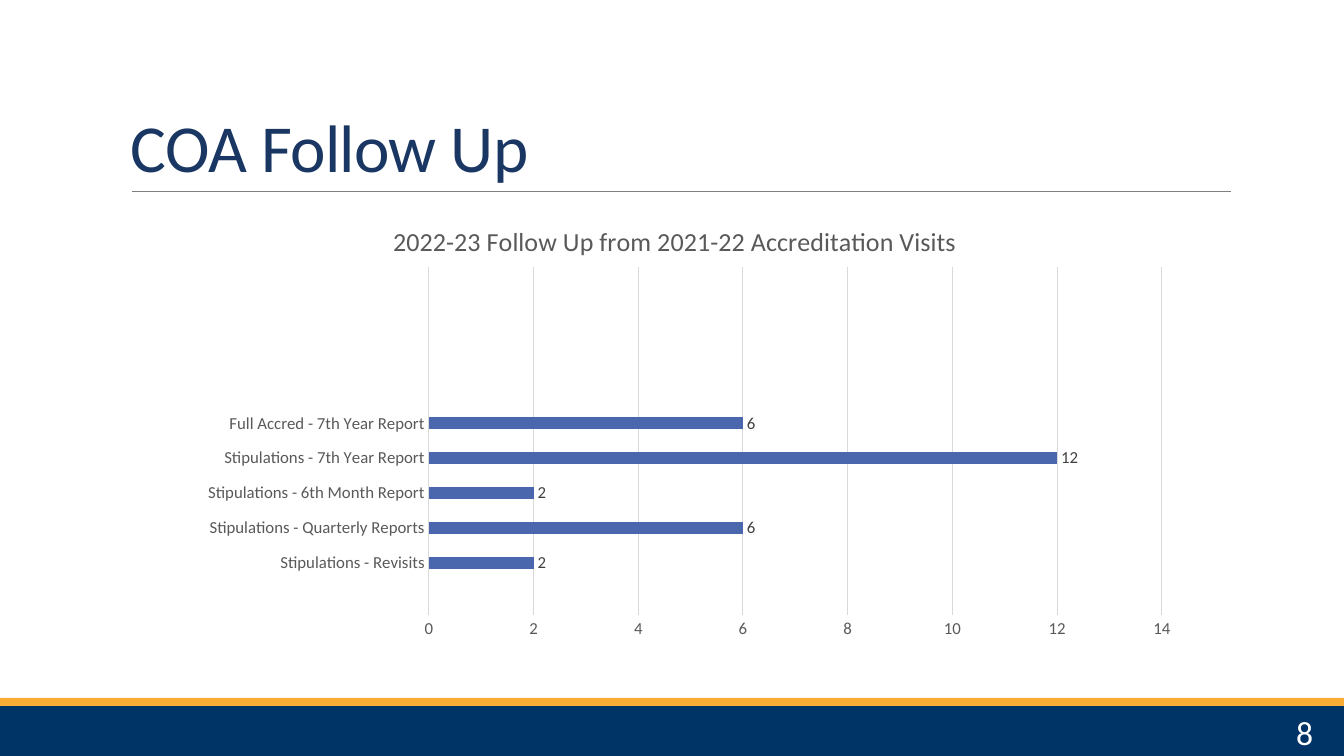
from lxml import etree
from pptx import Presentation
from pptx import util as u
from pptx.chart.data import CategoryChartData
from pptx.dml.color import RGBColor
from pptx.enum import chart as ch, shapes, text
from pptx.oxml.ns import qn

SIZE = (1344, 756)
SCALE = 12192000 / SIZE[0]
FONT = "Calibri"

BANDS = [((0, 706, 1344, 50), "003366"), ((0, 698, 1344, 8), "FAAC35")]
RULE = (132, 191, 1231, 191)
TEXTS = [
    ("COA Follow Up", (121, 31, 1109, 160),
     {"size": 48, "color": "1A3763"},
     {"line_spacing": 0.85}, text.MSO_ANCHOR.BOTTOM, -50),
    ("8", (1179, 712, 144, 40),
     {"size": 24, "color": "FFFFFF"},
     {"alignment": text.PP_ALIGN.RIGHT}, text.MSO_ANCHOR.MIDDLE, 0),
]
CHART_BOX = (158, 204, 1034, 444)
CHART_TITLE = "2022-23 Follow Up from 2021-22 Accreditation Visits"
SLOTS = 10
FOLLOW_UPS = [
    ("", None),
    ("Stipulations - Revisits", 2),
    ("Stipulations - Quarterly Reports", 6),
    ("Stipulations - 6th Month Report", 2),
    ("Stipulations - 7th Year Report", 12),
    ("Full Accred - 7th Year Report", 6),
]
PLOT = {"x": 0.262, "y": 0.141, "w": 0.709, "h": 0.785}


def px(lengths):
    return [u.Emu(round(n * SCALE)) for n in lengths]


def rgb(code):
    return RGBColor.from_string(code)


def paint(fill, code):
    fill.solid()
    fill.fore_color.rgb = rgb(code)


def stroke(line, code, width):
    paint(line.fill, code)
    line.width = u.Pt(width)


def style(font, size, color):
    values = {"name": FONT, "size": u.Pt(size), "bold": False}
    for name, value in values.items():
        setattr(font, name, value)
    font.color.rgb = rgb(color)


def add_text(page, words, place, font, layout, anchor, tracking):
    box = page.shapes.add_textbox(*px(place))
    frame = box.text_frame
    frame.word_wrap = True
    frame.vertical_anchor = anchor
    para = frame.paragraphs[0]
    for name, value in layout.items():
        setattr(para, name, value)
    span = para.add_run()
    span.text = words
    style(span.font, **font)
    if tracking:
        span.font._element.set("spc", str(tracking))


def place_plot(chart):
    area = chart._chartSpace.chart.plotArea
    for old in area.findall(qn("c:layout")):
        area.remove(old)
    layout = etree.Element(qn("c:layout"))
    manual = etree.SubElement(layout, qn("c:manualLayout"))
    settings = {"layoutTarget": "inner", "xMode": "edge", "yMode": "edge", **PLOT}
    for name, value in settings.items():
        etree.SubElement(manual, qn("c:" + name)).set("val", str(value))
    area.insert(0, layout)


def add_follow_up_chart(page):
    rows = FOLLOW_UPS + [("", None)] * (SLOTS - len(FOLLOW_UPS))
    data = CategoryChartData()
    data.categories = [label for label, _ in rows]
    data.add_series("Series 1", [count for _, count in rows])
    chart = page.shapes.add_chart(
        ch.XL_CHART_TYPE.BAR_CLUSTERED, *px(CHART_BOX), data).chart
    style(chart.font, 10, "000000")
    chart.has_legend = False
    chart.has_title = True
    title = chart.chart_title
    title.include_in_layout = False
    title.text_frame.text = CHART_TITLE
    style(title.text_frame.paragraphs[0].runs[0].font, 18.6, "595959")

    for axis in (chart.category_axis, chart.value_axis):
        axis.major_tick_mark = axis.minor_tick_mark = ch.XL_TICK_MARK.NONE
        style(axis.tick_labels.font, 12, "595959")
    stroke(chart.category_axis.format.line, "D9D9D9", 0.75)
    values = chart.value_axis
    values.format.line.fill.background()
    values.minimum_scale, values.maximum_scale, values.major_unit = 0, 14, 2
    values.has_major_gridlines = True
    stroke(values.major_gridlines.format.line, "D9D9D9", 0.75)

    plot = chart.plots[0]
    plot.gap_width = 182
    plot.vary_by_categories = False
    paint(plot.series[0].format.fill, "4A66AC")
    labels = plot.series[0].data_labels
    labels.show_value = True
    labels.position = ch.XL_LABEL_POSITION.OUTSIDE_END
    style(labels.font, 12, "404040")
    place_plot(chart)


def main():
    """Build the accreditation follow-up slide."""
    deck = Presentation()
    deck.slide_width, deck.slide_height = px(SIZE)
    page = deck.slides.add_slide(deck.slide_layouts[6])
    for place, color in BANDS:
        band = page.shapes.add_shape(shapes.MSO_SHAPE.RECTANGLE, *px(place))
        band.shadow.inherit = False
        paint(band.fill, color)
        band.line.fill.background()
    rule = page.shapes.add_connector(shapes.MSO_CONNECTOR.STRAIGHT, *px(RULE))
    stroke(rule.line, "808080", 0.5)
    etree.SubElement(rule._element.spPr, qn("a:effectLst"))
    for item in TEXTS:
        add_text(page, *item)
    add_follow_up_chart(page)
    deck.save("out.pptx")


if __name__ == "__main__":
    main()
